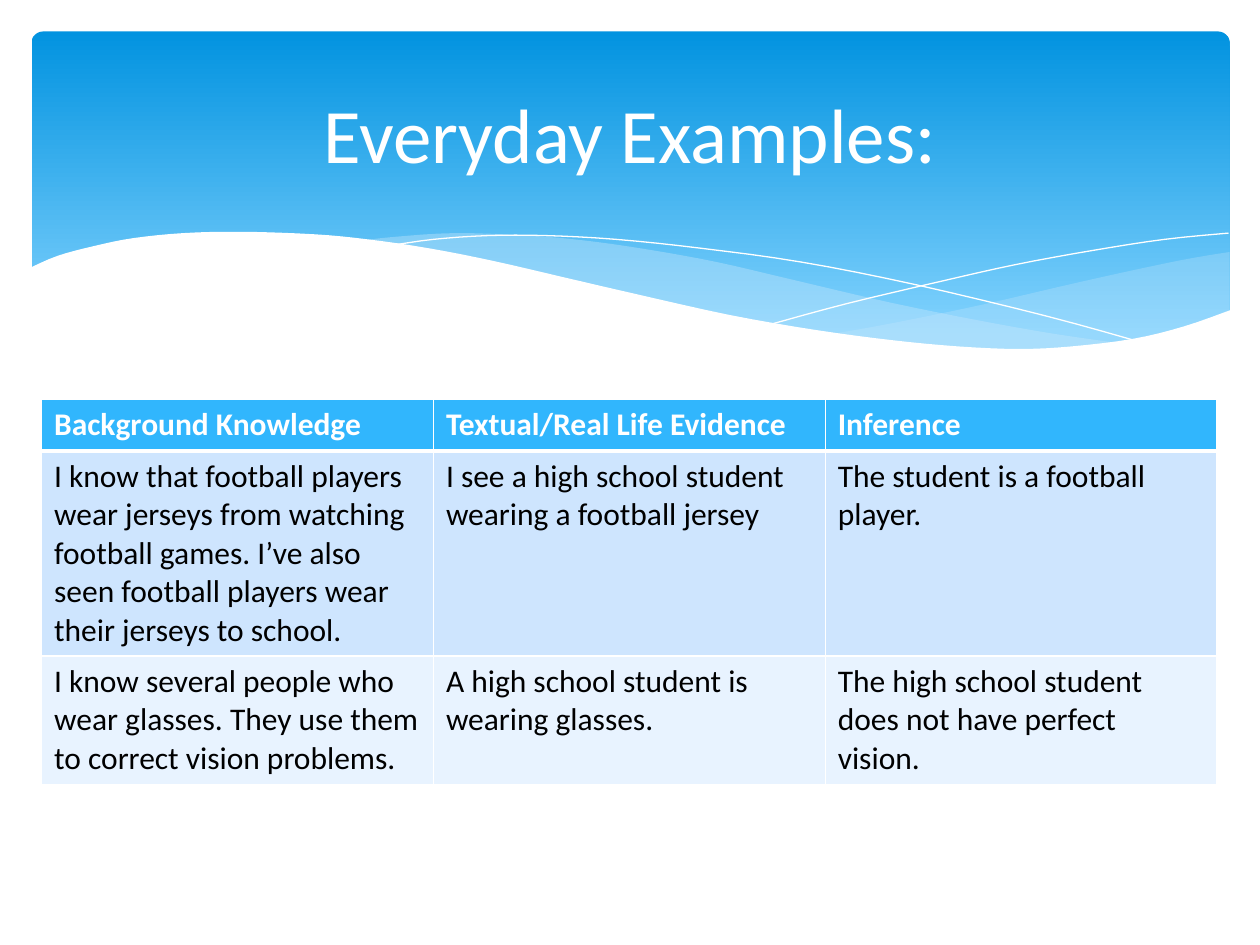
from lxml.etree import SubElement
from pptx import Presentation
from pptx.dml.color import RGBColor
from pptx.enum.shapes import MSO_SHAPE
from pptx.enum.text import MSO_ANCHOR, PP_ALIGN
from pptx.oxml.ns import qn
from pptx.util import Inches, Pt

FONT = "Calibri"
WHITE = "FFFFFF"
TITLE = "Everyday Examples:"
ROWS = [
    ("Background Knowledge", "Textual/Real Life Evidence", "Inference"),
    (
        "I know that football players wear jerseys from watching football games. "
        "I’ve also seen football players wear their jerseys to school.",
        "I see a high school student wearing a football jersey",
        "The student is a football player.",
    ),
    (
        "I know several people who wear glasses. They use them to correct vision problems.",
        "A high school student is wearing glasses.",
        "The high school student does not have perfect vision.",
    ),
]
ROW_HEIGHTS = (0.41, 1.62, 1.02)
ROW_FILLS = ("31B6FD", "CEE5FE", "E8F3FF")
COLUMN_WIDTH = 3.11

RIGHT_WAVE = [
    [(9.76, 2), (9.35, 2.07), (8.61, 2.23), (7.79, 2.42), (7.06, 2.57), (6.61, 2.65)],
    [(6.61, 2.65), (7.19, 2.72), (7.69, 2.77), (8.14, 2.78), (8.63, 2.75),
     (9.05, 2.69), (9.42, 2.59), (9.76, 2.47)],
]
MIDDLE_WAVE = [
    [(8.93, 2.73), (8.37, 2.65), (7.75, 2.54), (7.06, 2.4), (6.29, 2.22), (5.69, 2.08),
     (5.14, 1.98), (4.65, 1.91), (4.2, 1.87), (3.61, 1.85), (3.13, 1.88), (2.86, 1.91)],
    [(2.86, 1.91), (3.42, 1.99), (4.04, 2.11), (4.91, 2.32), (5.66, 2.48), (6.34, 2.61),
     (6.95, 2.7), (7.48, 2.76), (7.96, 2.78), (8.48, 2.77), (8.93, 2.73)],
]
FALLING_LINE = [
    [(3.09, 1.95), (3.44, 1.9), (3.87, 1.87), (4.33, 1.87), (4.89, 1.9), (5.56, 1.97),
     (6.36, 2.08), (7.27, 2.26), (8.31, 2.51), (9.07, 2.72)],
]
RISING_LINE = [
    [(6.13, 2.57), (6.72, 2.41), (7.48, 2.23), (8.06, 2.1), (8.66, 1.99),
     (9.24, 1.9), (9.75, 1.85)],
]
WHITE_WAVE = [
    [(9.77, 2.46), (9.4, 2.59), (8.99, 2.69), (8.5, 2.75), (8.09, 2.77), (7.61, 2.75),
     (7.08, 2.7), (6.48, 2.62), (5.79, 2.5), (5.03, 2.33), (4.47, 2.2), (3.91, 2.07),
     (3.4, 1.97), (2.92, 1.9), (2.5, 1.86), (1.93, 1.84), (1.46, 1.85), (1.06, 1.89),
     (0.76, 1.95), (0.46, 2.03), (0.23, 2.13)],
    [(0.23, 3.29), (9.77, 3.29)],
]
WAVES = [(RIGHT_WAVE, "C6E7FC", 29), (MIDDLE_WAVE, "C6E7FC", 40),
         (FALLING_LINE, None, 100), (RISING_LINE, None, 100), (WHITE_WAVE, WHITE, 100)]
STEPS = 4


def color(value):
    return RGBColor.from_string(value)


def spline(knots):
    padded = [knots[0], *knots, knots[-1]]
    points = [knots[0]]
    for before, start, end, after in zip(padded, padded[1:], padded[2:], padded[3:]):
        for step in range(1, STEPS + 1):
            t = step / STEPS
            points.append(tuple(
                (2 * b + (c - a) * t + (2 * a - 5 * b + 4 * c - d) * t ** 2
                 + (3 * b - a - 3 * c + d) * t ** 3) / 2
                for a, b, c, d in zip(before, start, end, after)
            ))
    return points


def add_wave(slide, curves, fill, opacity):
    points = [(Inches(x), Inches(y)) for curve in curves for x, y in spline(curve)]
    builder = slide.shapes.build_freeform(*points[0])
    builder.add_line_segments(points[1:], close=fill is not None)
    shape = builder.convert_to_shape()
    shape.shadow.inherit = False
    if fill is None:
        shape.fill.background()
        shape.line.color.rgb = color(WHITE)
        shape.line.width = Pt(0)
        return
    shape.line.fill.background()
    shape.fill.solid()
    shape.fill.fore_color.rgb = color(fill)
    if opacity < 100:
        hex_color = shape.fill._xPr.find(qn("a:solidFill"))[0]
        SubElement(hex_color, qn("a:alpha"), val=str(opacity * 1000))


def add_banner(slide):
    banner = slide.shapes.add_shape(
        MSO_SHAPE.ROUNDED_RECTANGLE, Inches(0.25), Inches(0.25), Inches(9.51), Inches(2.7))
    banner.adjustments[0] = 0.034
    banner.shadow.inherit = False
    banner.line.fill.background()
    banner.fill.gradient()
    banner.fill.gradient_angle = 270
    stops = ((0, "0293E0"), (0.9, "83D3FE"))
    for stop, (position, value) in zip(banner.fill.gradient_stops, stops):
        stop.position = position
        stop.color.rgb = color(value)


def set_borders(cell, widths):
    properties = cell._tc.get_or_add_tcPr()
    for side, width in zip("LRTB", widths):
        line = SubElement(properties, qn(f"a:ln{side}"), w=str(Pt(width)))
        SubElement(SubElement(line, qn("a:solidFill")), qn("a:srgbClr"), val=WHITE)


def style_text(paragraph, size, value, bold=False):
    paragraph.font.name = FONT
    paragraph.font.size = Pt(size)
    paragraph.font.bold = bold
    paragraph.font.color.rgb = color(value)


def add_examples(slide):
    table = slide.shapes.add_table(
        len(ROWS), len(ROWS[0]), Inches(0.33), Inches(3.17),
        Inches(COLUMN_WIDTH * len(ROWS[0])), Inches(sum(ROW_HEIGHTS))).table
    for column in table.columns:
        column.width = Inches(COLUMN_WIDTH)
    for index, (texts, height, fill) in enumerate(zip(ROWS, ROW_HEIGHTS, ROW_FILLS)):
        table.rows[index].height = Inches(height)
        header = index == 0
        for cell, text in zip(table.rows[index].cells, texts):
            set_borders(cell, (1, 1, 3 if index == 1 else 1, 3 if header else 1))
            cell.fill.solid()
            cell.fill.fore_color.rgb = color(fill)
            cell.text = text
            style_text(cell.text_frame.paragraphs[0], 18, WHITE if header else "000000", header)


def add_title(slide):
    frame = slide.shapes.add_textbox(
        Inches(0.5), Inches(0.37), Inches(9), Inches(1.37)).text_frame
    frame.word_wrap = True
    frame.vertical_anchor = MSO_ANCHOR.MIDDLE
    frame.text = TITLE
    paragraph = frame.paragraphs[0]
    paragraph.alignment = PP_ALIGN.CENTER
    style_text(paragraph, 44, WHITE)


def main():
    presentation = Presentation()
    presentation.slide_width = Inches(10)
    presentation.slide_height = Inches(7.5)
    slide = presentation.slides.add_slide(presentation.slide_layouts[6])
    add_banner(slide)
    for curves, fill, opacity in WAVES:
        add_wave(slide, curves, fill, opacity)
    add_examples(slide)
    add_title(slide)
    presentation.save("out.pptx")


if __name__ == "__main__":
    main()
